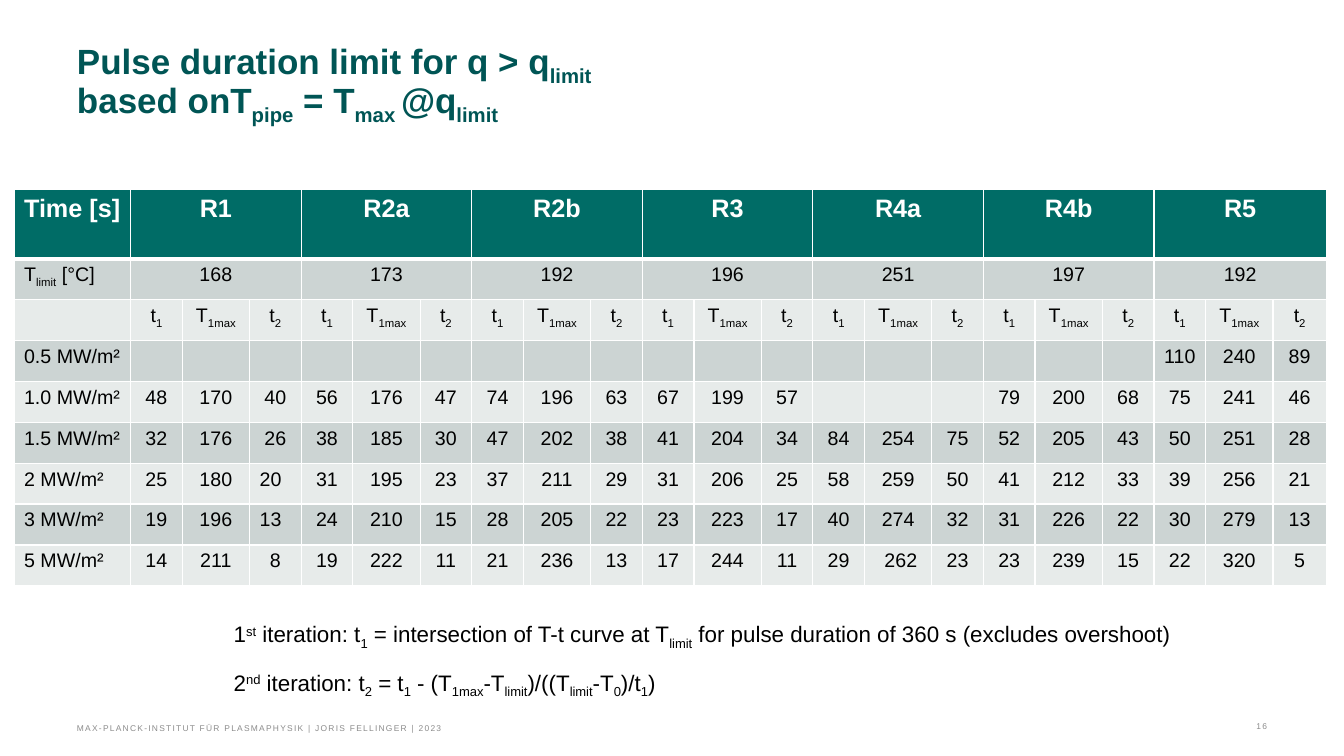
from lxml import etree
from pptx import Presentation
from pptx import util as u
from pptx.dml.color import RGBColor
from pptx.enum import text
from pptx.oxml import ns

TEAL, DARK_TEAL = "006C66", "005555"
BANDS = ("CCD4D3", "E7EBEA")
WHITE, BLACK, GREY = "FFFFFF", "000000", "8C8C8C"

REACTORS = ["R1", "R2a", "R2b", "R3", "R4a", "R4b", "R5"]
LIMITS = ["168", "173", "192", "196", "251", "197", "192"]
# Three values (t1, T1max, t2) for each reactor
PULSES = {
    "0.5 MW/m²": [""] * 18 + [110, 240, 89],
    "1.0 MW/m²": [48, 170, 40, 56, 176, 47, 74, 196, 63, 67, 199, 57,
                  "", "", "", 79, 200, 68, 75, 241, 46],
    "1.5 MW/m²": [32, 176, 26, 38, 185, 30, 47, 202, 38, 41, 204, 34,
                  84, 254, 75, 52, 205, 43, 50, 251, 28],
    "2 MW/m²": [25, 180, 20, 31, 195, 23, 37, 211, 29, 31, 206, 25,
                58, 259, 50, 41, 212, 33, 39, 256, 21],
    "3 MW/m²": [19, 196, 13, 24, 210, 15, 28, 205, 22, 23, 223, 17,
                40, 274, 32, 31, 226, 22, 30, 279, 13],
    "5 MW/m²": [14, 211, 8, 19, 222, 11, 21, 236, 13, 17, 244, 11,
                29, " 262", 23, 23, 239, 15, 22, 320, 5],
}
LEFT_ALIGNED = {(6, 3), (7, 3)}

TITLE = {"size": u.Pt(25), "bold": True}
HEADER = {"size": u.Pt(18), "bold": True}
BODY = {"size": u.Pt(14), "bold": False}
NOTE = {"size": u.Pt(16)}
FOOTER = {"size": u.Pt(6)}


def rgb(value):
    return RGBColor.from_string(value)


def set_all(target, values):
    for name, value in values.items():
        setattr(target, name, value)


def add_run(paragraph, words, font, color, baseline, spacing):
    run = paragraph.add_run()
    run.text = words
    set_all(run.font, {"name": "Arial", **font})
    run.font.color.rgb = rgb(color)
    properties = run._r.get_or_add_rPr()
    if baseline:
        properties.set("baseline", str(baseline))
    if spacing:
        properties.set("spc", str(spacing))


def write(paragraph, marked, font, color, spacing=0):
    """Write text with ~subscripts~, ^superscripts^ and line breaks."""
    for number, line in enumerate(marked.split("\n")):
        if number:
            paragraph.add_line_break()
        for low, part in enumerate(line.split("~")):
            for high, words in enumerate(part.split("^")):
                baseline = -25000 if low % 2 else 30000 if high % 2 else 0
                if words:
                    add_run(paragraph, words, font, color, baseline, spacing)


def add_text(slide, box, lines, font, color, layout=None, frame_format=None, spacing=0):
    frame = slide.shapes.add_textbox(*map(u.Pt, box)).text_frame
    margins = dict.fromkeys(
        ("margin_left", "margin_top", "margin_right", "margin_bottom"), 0)
    set_all(frame, {"word_wrap": True, **margins, **(frame_format or {})})
    for index, line in enumerate(lines):
        paragraph = frame.add_paragraph() if index else frame.paragraphs[0]
        set_all(paragraph, layout or {})
        if index:
            paragraph.space_before = u.Pt(11.5)
        write(paragraph, line, font, color, spacing)


def add_borders(cell, top, bottom):
    properties = cell._tc.get_or_add_tcPr()
    for side, width in {"L": 1, "R": 1, "T": top, "B": bottom}.items():
        line = etree.SubElement(properties, ns.qn(f"a:ln{side}"), w=str(u.Pt(width)))
        fill = etree.SubElement(line, ns.qn("a:solidFill"))
        etree.SubElement(fill, ns.qn("a:srgbClr"), val=WHITE)


def fill_cell(cell, row, column, words):
    header = row == 0
    left = column == 0 or (row, column) in LEFT_ALIGNED
    add_borders(cell, top=3 if row == 1 else 1, bottom=3 if header else 1)
    cell.fill.solid()
    cell.fill.fore_color.rgb = rgb(TEAL if header else BANDS[(row + 1) % 2])
    set_all(cell, {"margin_left": u.Pt(7.2 if left else 3),
                   "margin_right": u.Pt(3)})
    paragraph = cell.text_frame.paragraphs[0]
    paragraph.alignment = text.PP_ALIGN.LEFT if left else text.PP_ALIGN.CENTER
    paragraph.font.size = u.Pt(14)
    write(paragraph, str(words), HEADER if header else BODY,
          WHITE if header else BLACK)


def add_pulse_table(slide):
    def spread(values):
        return [item for value in values for item in (value, "", "")]

    rows = [["Time [s]"] + spread(REACTORS),
            ["T~limit~ [°C]"] + spread(LIMITS),
            [""] + ["t~1~", "T~1max~", "t~2~"] * len(REACTORS)]
    rows += [[load] + values for load, values in PULSES.items()]
    widths = [83.3] + [36.9, 48.1, 36.9] * len(REACTORS)
    widths[-1] = 38.2
    heights = [49.4] + [29.2] * (len(rows) - 1)

    table = slide.shapes.add_table(
        len(rows), len(widths), u.Pt(10), u.Pt(135.5),
        u.Pt(sum(widths)), u.Pt(sum(heights))).table
    table.horz_banding = False
    for column, width in zip(table.columns, widths):
        column.width = u.Pt(width)
    for row, height in zip(table.rows, heights):
        row.height = u.Pt(height)
    for r, values in enumerate(rows):
        for c, words in enumerate(values):
            fill_cell(table.cell(r, c), r, c, words)
    # One merged heading and limit per reactor
    for r in (0, 1):
        for c in range(1, len(widths), 3):
            table.cell(r, c).merge(table.cell(r, c + 2))


def main():
    presentation = Presentation()
    set_all(presentation, {"slide_width": u.Pt(960), "slide_height": u.Pt(540)})
    slide = presentation.slides.add_slide(presentation.slide_layouts[6])

    # Title
    add_text(slide, (55, 34.5, 754, 70.5),
             ["Pulse duration limit for q > q~limit~\n"
              "based onT~pipe~ = T~max ~@q~limit~"],
             TITLE, DARK_TEAL, {"line_spacing": u.Pt(28)})

    # Pulse durations
    add_pulse_table(slide)

    # Iteration formulas
    add_text(slide, (167, 442, 712, 58),
             ["1^st^ iteration: t~1~ = intersection of T-t curve at T~limit~ "
              "for pulse duration of 360 s (excludes overshoot)",
              "2^nd^ iteration: t~2~ = t~1~ - (T~1max~-T~limit~)"
              "/((T~limit~-T~0~)/t~1~)"],
             NOTE, BLACK, {"line_spacing": u.Pt(23)})

    # Footer and slide number
    bottom = {"vertical_anchor": text.MSO_ANCHOR.BOTTOM}
    add_text(slide, (55, 511, 645, 13),
             ["MAX-PLANCK-INSTITUT FÜR PLASMAPHYSIK | JORIS FELLINGER | 2023"],
             FOOTER, GREY, frame_format=bottom, spacing=90)
    add_text(slide, (879, 511, 26, 11.5), ["16"], FOOTER, GREY,
             {"alignment": text.PP_ALIGN.RIGHT}, bottom, 90)

    presentation.save("out.pptx")


if __name__ == "__main__":
    main()
